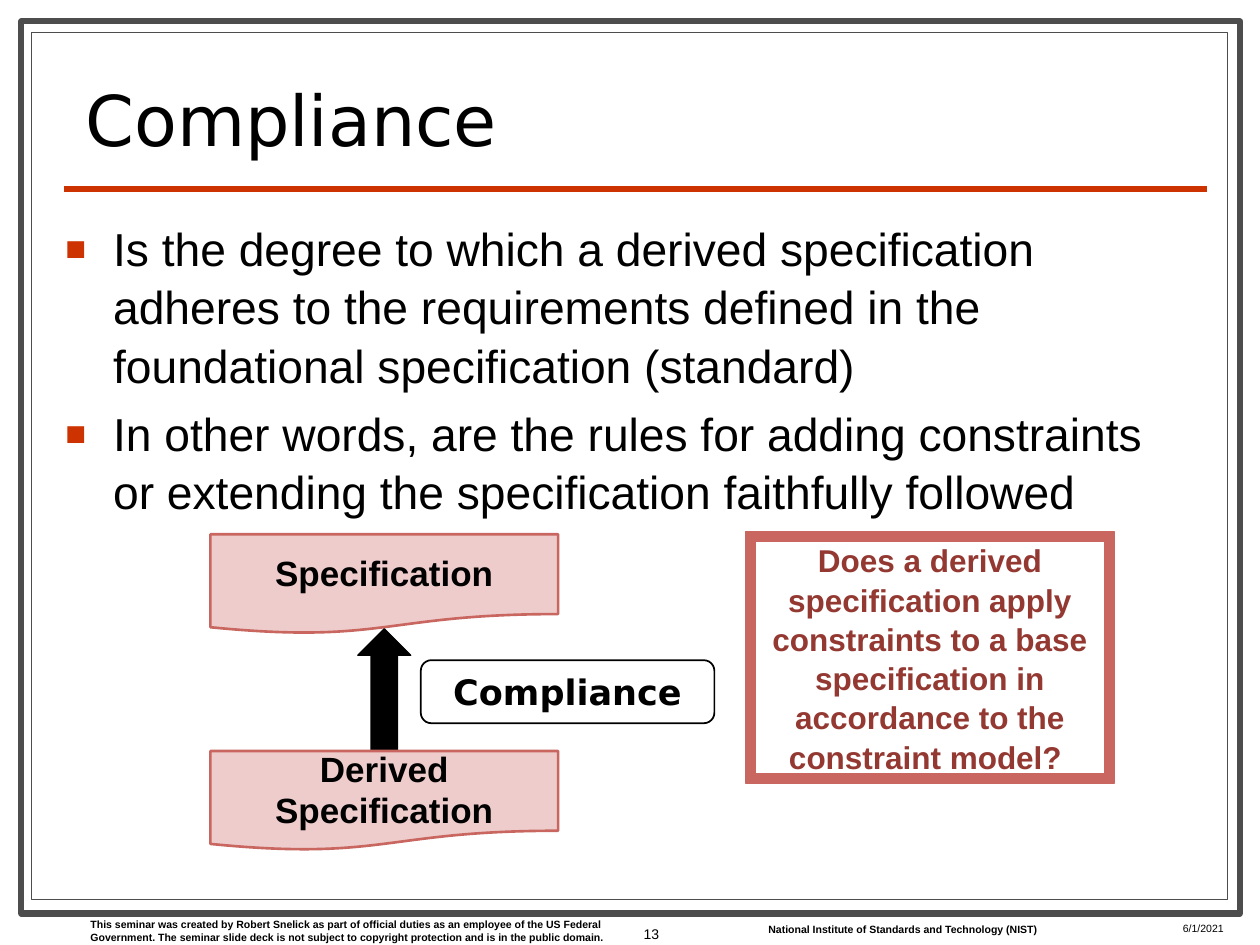
from lxml import etree
from pptx import Presentation
from pptx.dml.color import RGBColor
from pptx.enum.shapes import MSO_CONNECTOR, MSO_SHAPE
from pptx.enum.text import MSO_ANCHOR, PP_ALIGN
from pptx.oxml.ns import qn
from pptx.util import Inches, Pt

WHITE = RGBColor(0xFF, 0xFF, 0xFF)
BLACK = RGBColor(0x00, 0x00, 0x00)
GRAY = RGBColor(0x4D, 0x4D, 0x4D)
ORANGE = RGBColor(0xCC, 0x33, 0x00)
PINK = RGBColor(0xEE, 0xCC, 0xCC)
ROSE = RGBColor(0xC9, 0x66, 0x60)
DARK_RED = RGBColor(0x94, 0x38, 0x32)

SANS = "Arial"
HEADING = "DejaVu Sans"

LEFT, CENTER, RIGHT = PP_ALIGN.LEFT, PP_ALIGN.CENTER, PP_ALIGN.RIGHT
TOP, MIDDLE, BOTTOM = MSO_ANCHOR.TOP, MSO_ANCHOR.MIDDLE, MSO_ANCHOR.BOTTOM
RECTANGLE = MSO_SHAPE.RECTANGLE
ROUNDED = MSO_SHAPE.ROUNDED_RECTANGLE
DOCUMENT = MSO_SHAPE.FLOWCHART_DOCUMENT
DOWN_ARROW = MSO_SHAPE.DOWN_ARROW
FRAME = MSO_SHAPE.FRAME
STRAIGHT = MSO_CONNECTOR.STRAIGHT


class SlideBuilder:
    """Draws elements on one slide; boxes are (left, top, width, height) in inches."""

    def __init__(self, slide):
        self.slide = slide

    def fill_text(self, shape, texts, size, font=SANS, color=BLACK, bold=False,
                  align=LEFT, anchor=TOP, spacing=None, bulleted=False):
        frame = shape.text_frame
        frame.word_wrap = True
        frame.vertical_anchor = anchor
        for index, text in enumerate(texts):
            paragraph = frame.paragraphs[0] if index == 0 else frame.add_paragraph()
            if bulleted:
                self.add_bullet(paragraph)
            if index:
                paragraph.space_before = Pt(6)
            paragraph.alignment = align
            if spacing:
                paragraph.line_spacing = spacing
            run = paragraph.add_run()
            run.text = text
            run.font.size = Pt(size)
            run.font.name = font
            run.font.bold = bold
            run.font.color.rgb = color

    def add_bullet(self, paragraph):
        properties = paragraph._p.get_or_add_pPr()
        properties.set("marL", str(Inches(0.38)))
        properties.set("indent", str(Inches(-0.38)))
        bullet_color = etree.SubElement(properties, qn("a:buClr"))
        etree.SubElement(bullet_color, qn("a:srgbClr"), val=str(ORANGE))
        etree.SubElement(properties, qn("a:buSzPct"), val="75000")
        etree.SubElement(properties, qn("a:buFont"), typeface=SANS)
        etree.SubElement(properties, qn("a:buChar"), char="■")

    def text(self, box, texts, size, **style):
        shape = self.slide.shapes.add_textbox(*map(Inches, box))
        self.fill_text(shape, texts, size, **style)

    def shape(self, kind, box, fill, line, width):
        shape = self.slide.shapes.add_shape(kind, *map(Inches, box))
        shape.shadow.inherit = False
        shape.fill.solid()
        shape.fill.fore_color.rgb = fill
        shape.line.color.rgb = line
        shape.line.width = Pt(width)
        return shape

    def rule(self, start, end, color, width):
        line = self.slide.shapes.add_connector(STRAIGHT, *map(Inches, start + end))
        line.line.color.rgb = color
        line.line.width = Pt(width)
        etree.SubElement(line._element.spPr, qn("a:effectLst"))

    def document(self, top, label):
        shape = self.shape(DOCUMENT, (1.67, top, 2.76, 0.79), PINK, ROSE, 1.5)
        self.fill_text(shape, [label], 20, bold=True, align=CENTER, anchor=MIDDLE,
                       spacing=0.97)


def main():
    presentation = Presentation()
    presentation.slide_width = Inches(10)
    presentation.slide_height = Inches(7.5)
    builder = SlideBuilder(presentation.slides.add_slide(presentation.slide_layouts[6]))

    # Border and footer
    builder.shape(RECTANGLE, (0.17, 0.17, 9.67, 7.08), WHITE, GRAY, 3.5)
    builder.shape(RECTANGLE, (0.25, 0.26, 9.49, 6.88), WHITE, GRAY, 0.75)
    builder.rule((0.51, 1.5), (9.58, 1.5), ORANGE, 3)
    builder.text((0.62, 7.24, 4.33, 0.3), [
        "This seminar was created by Robert Snelick as part of official duties as an "
        "employee of the US Federal Government. The seminar slide deck is not subject "
        "to copyright protection and is in the public domain."], 6, bold=True)
    builder.text((6, 7.28, 2.38, 0.2),
                 ["National Institute of Standards and Technology (NIST)"], 6, bold=True)
    builder.text((9.29, 7.27, 0.63, 0.16), ["6/1/2021"], 6)
    builder.text((4.75, 7.15, 0.58, 0.52), ["13"], 8, align=RIGHT, anchor=MIDDLE)

    # Title and body
    builder.text((0.58, 0.42, 8.92, 0.9), ["Compliance"], 40, font=HEADING,
                 anchor=BOTTOM, spacing=0.8)
    builder.text((0.42, 1.68, 9.17, 2.2), [
        "Is the degree to which a derived specification adheres to the requirements "
        "defined in the foundational specification (standard)",
        "In other words, are the rules for adding constraints or extending the "
        "specification faithfully followed"], 26.4, spacing=1.05, bulleted=True)

    # Diagram
    label = builder.shape(ROUNDED, (3.34, 5.24, 2.33, 0.5), WHITE, BLACK, 1)
    builder.fill_text(label, ["Compliance"], 20, font=HEADING, bold=True, align=CENTER,
                      anchor=MIDDLE)
    builder.document(4.24, "Specification")
    arrow = builder.shape(DOWN_ARROW, (2.84, 4.99, 0.42, 0.98), BLACK, BLACK, 0.75)
    arrow.rotation = 180
    question = builder.shape(FRAME, (5.92, 4.22, 2.92, 2), ROSE, ROSE, 0.75)
    question.adjustments[0] = 0.038
    builder.fill_text(question, [
        "Does a derived specification apply constraints to a base specification in "
        "accordance to the constraint model? "], 18, color=DARK_RED, bold=True,
        align=CENTER, anchor=MIDDLE, spacing=1.04)
    builder.document(5.96, "Derived Specification")

    presentation.save("out.pptx")


if __name__ == "__main__":
    main()
